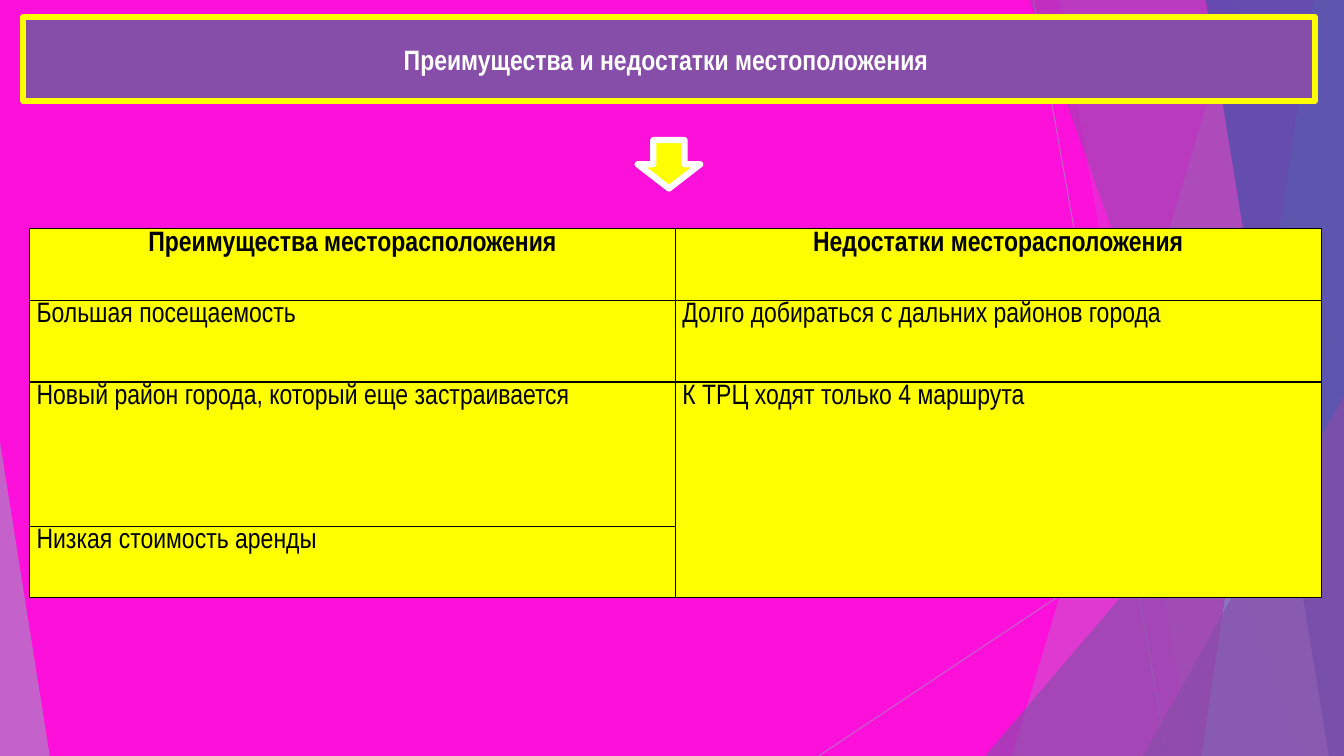
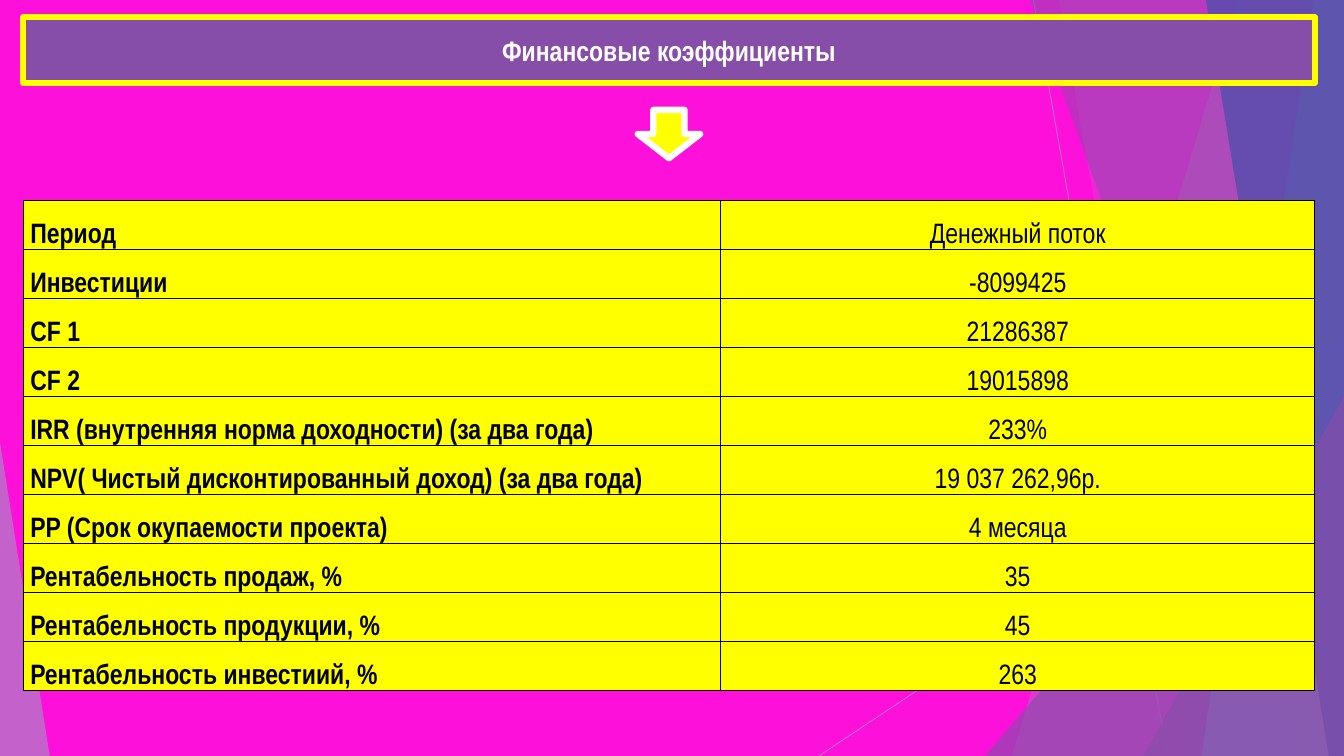
from lxml import etree
from pptx import Presentation
from pptx.dml.color import RGBColor
from pptx.enum.shapes import MSO_CONNECTOR, MSO_SHAPE
from pptx.enum.text import MSO_ANCHOR, MSO_AUTO_SIZE, PP_ALIGN
from pptx.oxml.ns import qn
from pptx.util import Inches, Pt

WIDTH, HEIGHT = Inches(13.33), Inches(7.5)
FONT = "Arial Narrow"
MAGENTA = RGBColor(0xFC, 0x10, 0xDA)
YELLOW = RGBColor(0xFF, 0xFF, 0x00)
WHITE = RGBColor(0xFF, 0xFF, 0xFF)
BLACK = RGBColor(0x00, 0x00, 0x00)
LILAC = RGBColor(0xAD, 0x84, 0xC6)
PURPLE = RGBColor(0x87, 0x4E, 0xA9)
LAVENDER = RGBColor(0x87, 0x84, 0xC7)
INDIGO = RGBColor(0x52, 0x4E, 0xAB)

TRIANGLE = MSO_SHAPE.ISOSCELES_TRIANGLE
DOWN_ARROW = MSO_SHAPE.DOWN_ARROW
STRAIGHT = MSO_CONNECTOR.STRAIGHT
LEFT, CENTER = PP_ALIGN.LEFT, PP_ALIGN.CENTER
TOP, MIDDLE, BOTTOM = MSO_ANCHOR.TOP, MSO_ANCHOR.MIDDLE, MSO_ANCHOR.BOTTOM
NO_AUTOFIT = MSO_AUTO_SIZE.NONE

TITLE_ONLY = 5
BLOCK_WIDTH = 96.1
BANNER_LEFT, BANNER_TOP = 1.73, 2.27
ARROW_WIDTH, ARROW_HEIGHT = 4.65, 6.4


def across(percent):
    return round(WIDTH * percent / 100)


def down(percent):
    return round(HEIGHT * percent / 100)


def box(left, top, width, height):
    return across(left), down(top), across(width), down(height)


def write(frame, text, color=BLACK, bold=False, align=LEFT, spacing=1.0):
    paragraph = frame.paragraphs[0]
    paragraph.alignment = align
    paragraph.line_spacing = spacing
    run = paragraph.add_run()
    run.text = text
    run.font.name = FONT
    run.font.size = Pt(20)
    run.font.bold = bold
    run.font.color.rgb = color


def set_opacity(part, percent):
    color = next(part.element.iter(qn("a:srgbClr")))
    etree.SubElement(color, qn("a:alpha"), val=str(percent * 1000))


def tint(facet, color, opacity):
    facet.shadow.inherit = False
    facet.fill.solid()
    facet.fill.fore_color.rgb = color
    facet.line.fill.background()
    set_opacity(facet, opacity)


def add_ray(shapes, start, end):
    ray = shapes.add_connector(STRAIGHT, across(start[0]), down(start[1]),
                               across(end[0]), down(end[1]))
    ray.line.color.rgb = LILAC
    ray.line.width = Pt(0.75)
    set_opacity(ray, 70)
    etree.SubElement(ray.element.spPr, qn("a:effectLst"))


def add_band(shapes, top_x, bottom_x, color, opacity):
    outline = shapes.build_freeform(across(top_x), 0)
    outline.add_line_segments([(WIDTH, 0), (WIDTH, HEIGHT), (across(bottom_x), HEIGHT)])
    tint(outline.convert_to_shape(), color, opacity)


def add_corner(shapes, left, top, width, peak, color, opacity):
    corner = shapes.add_shape(TRIANGLE, *box(left, top, width, 100 - top))
    corner.adjustments[0] = peak
    tint(corner, color, opacity)


def add_backdrop(slide):
    shapes = slide.shapes
    tree = shapes.element
    existing = list(tree)
    add_ray(shapes, (76.9, 0), (86.86, 100))
    add_ray(shapes, (100, 53.73), (60.92, 100))
    add_band(shapes, 92.1, 75.3, LILAC, 36)
    add_band(shapes, 78.77, 88.74, LILAC, 20)
    add_corner(shapes, 73.3, 44.4, 26.7, 1, PURPLE, 66)
    add_band(shapes, 76.6, 96.85, PURPLE, 50)
    add_band(shapes, 97.75, 89.4, LAVENDER, 70)
    add_band(shapes, 89.72, 98.87, INDIGO, 80)
    add_corner(shapes, 85.07, 52.4, 14.93, 1, PURPLE, 66)
    add_corner(shapes, 0, 58.5, 3.7, 0, LILAC, 70)
    layout_tree = slide.slide_layout.shapes.element
    facets = [part for part in tree if part not in existing]
    for position, facet in enumerate(facets, start=2):
        layout_tree.insert(position, facet)


def add_banner(slide, text, height):
    banner = slide.shapes.title
    banner.left, banner.top, banner.width, banner.height = box(
        BANNER_LEFT, BANNER_TOP, BLOCK_WIDTH, height)
    outline = etree.SubElement(banner.element.spPr, qn("a:prstGeom"), prst="roundRect")
    etree.SubElement(outline, qn("a:avLst"))
    banner.fill.solid()
    banner.fill.fore_color.rgb = PURPLE
    banner.line.color.rgb = YELLOW
    banner.line.width = Pt(4.5)
    frame = banner.text_frame
    frame.word_wrap = True
    frame.auto_size = NO_AUTOFIT
    frame.vertical_anchor = MIDDLE
    write(frame, text, color=WHITE, bold=True, align=CENTER)


def add_arrow(slide, top):
    left = BANNER_LEFT + (BLOCK_WIDTH - ARROW_WIDTH) / 2
    arrow = slide.shapes.add_shape(DOWN_ARROW, *box(left, top, ARROW_WIDTH, ARROW_HEIGHT))
    arrow.shadow.inherit = False
    arrow.fill.solid()
    arrow.fill.fore_color.rgb = YELLOW
    arrow.line.color.rgb = WHITE
    arrow.line.width = Pt(4.5)


def format_cell(cell, anchor):
    cell.margin_left = cell.margin_right = Inches(0.07)
    cell.margin_top = cell.margin_bottom = 0
    cell.vertical_anchor = anchor
    properties = cell._tc.get_or_add_tcPr()
    for side in ("lnL", "lnR", "lnT", "lnB"):
        border = etree.SubElement(properties, qn(f"a:{side}"), w=str(Pt(1)))
        paint = etree.SubElement(border, qn("a:solidFill"))
        etree.SubElement(paint, qn("a:srgbClr"), val=str(BLACK))
    cell.fill.solid()
    cell.fill.fore_color.rgb = YELLOW


def add_grid(slide, left, top, column_shares, row_heights, rows, style, anchor):
    grid = slide.shapes.add_table(
        len(rows), len(column_shares),
        *box(left, top, BLOCK_WIDTH, sum(row_heights))).table
    for column, share in zip(grid.columns, column_shares):
        column.width = across(BLOCK_WIDTH * share)
    for row, height in zip(grid.rows, row_heights):
        row.height = down(height)
    for r, texts in enumerate(rows):
        for c, text in enumerate(texts):
            cell = grid.cell(r, c)
            format_cell(cell, anchor)
            if text is None:
                grid.cell(r - 1, c).merge(cell)
            else:
                write(cell.text_frame, text, spacing=1.07, **style(r, c))


def header_row_style(row, column):
    return {"bold": row == 0, "align": CENTER if row == 0 else LEFT}


def label_column_style(row, column):
    return {"bold": column == 0, "align": LEFT if column == 0 else CENTER}


LOCATION_ROWS = [
    ("Преимущества месторасположения", "Недостатки месторасположения"),
    ("Большая посещаемость", "Долго добираться с дальних районов города"),
    ("Новый район города, который еще застраивается", "К ТРЦ ходят только 4 маршрута"),
    ("Низкая стоимость аренды", None),
]
FINANCE_ROWS = [
    ("Период", "Денежный поток"),
    ("Инвестиции", "-8099425"),
    ("CF 1", "21286387"),
    ("CF 2", "19015898"),
    ("IRR (внутренняя норма доходности) (за два года)", "233%"),
    ("NPV( Чистый дисконтированный доход) (за два года)", "19 037 262,96р."),
    ("PP (Срок окупаемости проекта)", "4 месяца"),
    ("Рентабельность продаж, %", "35"),
    ("Рентабельность продукции, %", "45"),
    ("Рентабельность инвестиий, %", "263"),
]


def build_location(slide):
    add_banner(slide, "Преимущества и недостатки местоположения ", 11.07)
    add_grid(slide, 2.2, 30.27, (0.5, 0.5), (9.47, 10.8, 19.07, 9.47),
             LOCATION_ROWS, header_row_style, TOP)
    add_arrow(slide, 18.53)


def build_finance(slide):
    add_banner(slide, "Финансовые коэффициенты", 8.67)
    add_grid(slide, BANNER_LEFT, 26.53, (0.54, 0.46), [6.48] * len(FINANCE_ROWS),
             FINANCE_ROWS, label_column_style, BOTTOM)
    add_arrow(slide, 14.53)


def main():
    deck = Presentation()
    deck.slide_width, deck.slide_height = WIDTH, HEIGHT
    backdrop = deck.slide_master.background.fill
    backdrop.solid()
    backdrop.fore_color.rgb = MAGENTA
    layout = deck.slide_layouts[TITLE_ONLY]
    location, finance = [deck.slides.add_slide(layout) for _ in range(2)]
    add_backdrop(location)
    build_location(location)
    build_finance(finance)
    deck.save("out.pptx")


if __name__ == "__main__":
    main()
